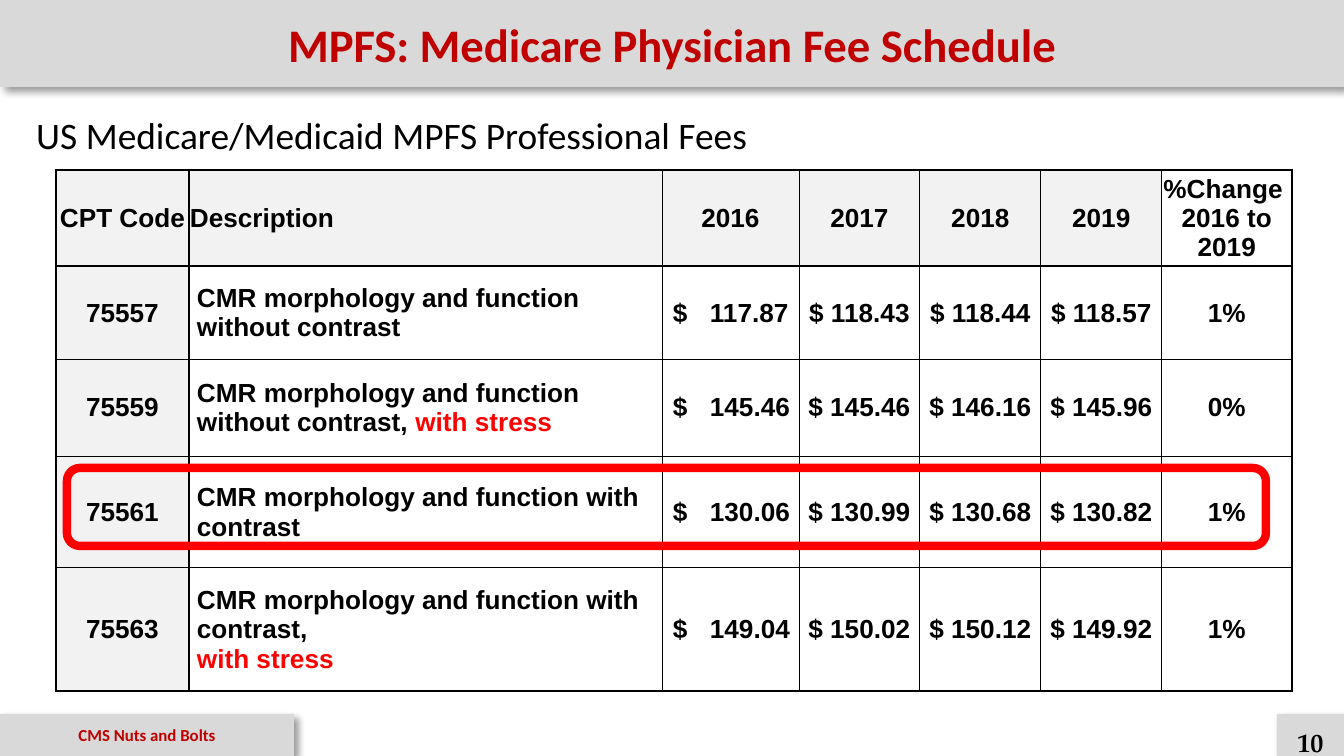
from lxml.etree import SubElement
from pptx import Presentation
from pptx.dml.color import RGBColor
from pptx.enum.shapes import MSO_SHAPE
from pptx.enum.text import MSO_ANCHOR, PP_ALIGN
from pptx.oxml import parse_xml
from pptx.oxml.ns import nsdecls, qn
from pptx.util import Emu, Pt

PX = 914400 / 134.4
RED, BLACK, GREY, PALE, WHITE = "C00000", "000000", "D9D9D9", "F2F2F2", "FFFFFF"
BRIGHT = "FF0000"


def px(*nums):
    return [Emu(round(n * PX)) for n in nums]


def write(para, text, color, **look):
    run = para.add_run()
    run.text = text
    run.font.color.rgb = RGBColor.from_string(color)
    for key, val in look.items():
        setattr(run.font, key, val)


deck = Presentation()
deck.slide_width, deck.slide_height = px(1344, 756)
slide = deck.slides.add_slide(deck.slide_layouts[5])
shapes = slide.shapes

# Title bar, footer tag and page number
title = shapes.title
foot = shapes.add_shape(MSO_SHAPE.RECTANGLE, 0, 0, 0, 0)
page = shapes.add_shape(MSO_SHAPE.RECTANGLE, 0, 0, 0, 0)
bars = [
    (title, (0, 0, 1344, 87), "MPFS: Medicare Physician Fee Schedule", RED,
     dict(name="Calibri", size=Pt(25), bold=True)),
    (foot, (0, 714, 294, 42), "CMS Nuts and Bolts", RED,
     dict(name="Calibri", size=Pt(9), bold=True)),
    (page, (1277, 714, 67, 42), "10", BLACK,
     dict(name="TeX Gyre Pagella", size=Pt(14), bold=True)),
]
for bar, box, text, color, look in bars:
    bar.left, bar.top, bar.width, bar.height = px(*box)
    bar.fill.solid()
    bar.fill.fore_color.rgb = RGBColor.from_string(GREY)
    bar.line.fill.background()
    bar._element.spPr.append(parse_xml(
        f'<a:effectLst {nsdecls("a")}>'
        '<a:outerShdw blurRad="50800" dist="38100" dir="2700000" algn="tl" rotWithShape="0">'
        '<a:srgbClr val="000000"><a:alpha val="40000"/></a:srgbClr>'
        '</a:outerShdw></a:effectLst>'))
    frame = bar.text_frame
    frame.word_wrap = True
    frame.vertical_anchor = MSO_ANCHOR.MIDDLE
    frame.paragraphs[0].alignment = PP_ALIGN.CENTER
    write(frame.paragraphs[0], text, color, **look)

frame = page.text_frame
frame.vertical_anchor = MSO_ANCHOR.TOP
frame.paragraphs[0].space_before = Pt(2.8)
for side, gap in dict(left=0, top=12, right=0, bottom=0).items():
    setattr(frame, f"margin_{side}", px(gap)[0])

# Fee table: "|" splits paragraphs, "/" breaks a line, "*" starts red text
rows = [
    ["CPT Code", "Description", "2016", "2017", "2018", "2019", "%Change /2016 to 2019"],
    ["75557", "CMR morphology and function|without contrast",
     "$\t117.87", "$ 118.43", "$ 118.44", "$ 118.57", "1%"],
    ["75559", "CMR morphology and function|without contrast, *with stress",
     "$\t145.46", "$ 145.46", "$ 146.16", "$ 145.96", "0%"],
    ["75561", "CMR morphology and function with|contrast",
     "$\t130.06", "$ 130.99", "$ 130.68", "$ 130.82", "1%"],
    ["75563", "CMR morphology and function with|contrast, /*with stress",
     "$\t149.04", "$ 150.02", "$ 150.12", "$ 149.92", "1%"],
]
wide = [133, 473, 137, 121, 121, 121, 130]
high = [96, 93, 97, 112, 123]
table = shapes.add_table(5, 7, *px(56, 170, sum(wide), sum(high))).table
table.first_row = table.horz_banding = False
for col, size in zip(table.columns, wide):
    col.width = px(size)[0]
for row, size in zip(table.rows, high):
    row.height = px(size)[0]

for r, row in enumerate(rows):
    for c, text in enumerate(row):
        cell = table.cell(r, c)
        tabbed = "\t" in text
        indent = 11 if tabbed else 8 if c == 1 and r else 1
        cell.vertical_anchor = MSO_ANCHOR.MIDDLE
        for side, gap in dict(left=indent, top=1, right=1, bottom=0).items():
            setattr(cell, f"margin_{side}", px(gap)[0])

        # Heavy lines frame the table, its header and its first column
        props = cell._tc.get_or_add_tcPr()
        heavy = dict(L=c < 2, R=c in (0, 6), T=r < 2, B=r in (0, 4))
        for side, thick in heavy.items():
            edge = SubElement(props, qn(f"a:ln{side}"), w=str(Pt(1 if thick else 0.5)))
            SubElement(SubElement(edge, qn("a:solidFill")), qn("a:srgbClr"), val=BLACK)
        cell.fill.solid()
        shade = PALE if c == 0 or (r == 0 and c < 6) else WHITE
        cell.fill.fore_color.rgb = RGBColor.from_string(shade)

        for n, part in enumerate(text.split("|")):
            para = cell.text_frame.add_paragraph() if n else cell.text_frame.paragraphs[0]
            left = c == 1 or tabbed
            para.alignment = PP_ALIGN.LEFT if left else PP_ALIGN.CENTER
            if tabbed:
                stops = SubElement(para._p.get_or_add_pPr(), qn("a:tabLst"))
                SubElement(stops, qn("a:tab"), pos=str(px(37)[0]), algn="l")
            for k, line in enumerate(part.split("/")):
                if k:
                    para.add_line_break()
                for words, color in zip(line.split("*"), (BLACK, BRIGHT)):
                    if words:
                        write(para, words, color, name="Arial", size=Pt(14), bold=True)

# Subtitle
note = shapes.add_textbox(*px(23, 106, 746, 59))
write(note.text_frame.paragraphs[0], "US Medicare/Medicaid MPFS Professional Fees",
      BLACK, name="Calibri", size=Pt(20))

# Red ring around code 75561
ring = shapes.add_shape(MSO_SHAPE.ROUNDED_RECTANGLE, *px(67, 468, 1199, 78))
ring.shadow.inherit = False
ring.fill.background()
ring.line.color.rgb = RGBColor.from_string(BRIGHT)
ring.line.width = Pt(4.5)

deck.save("out.pptx")
